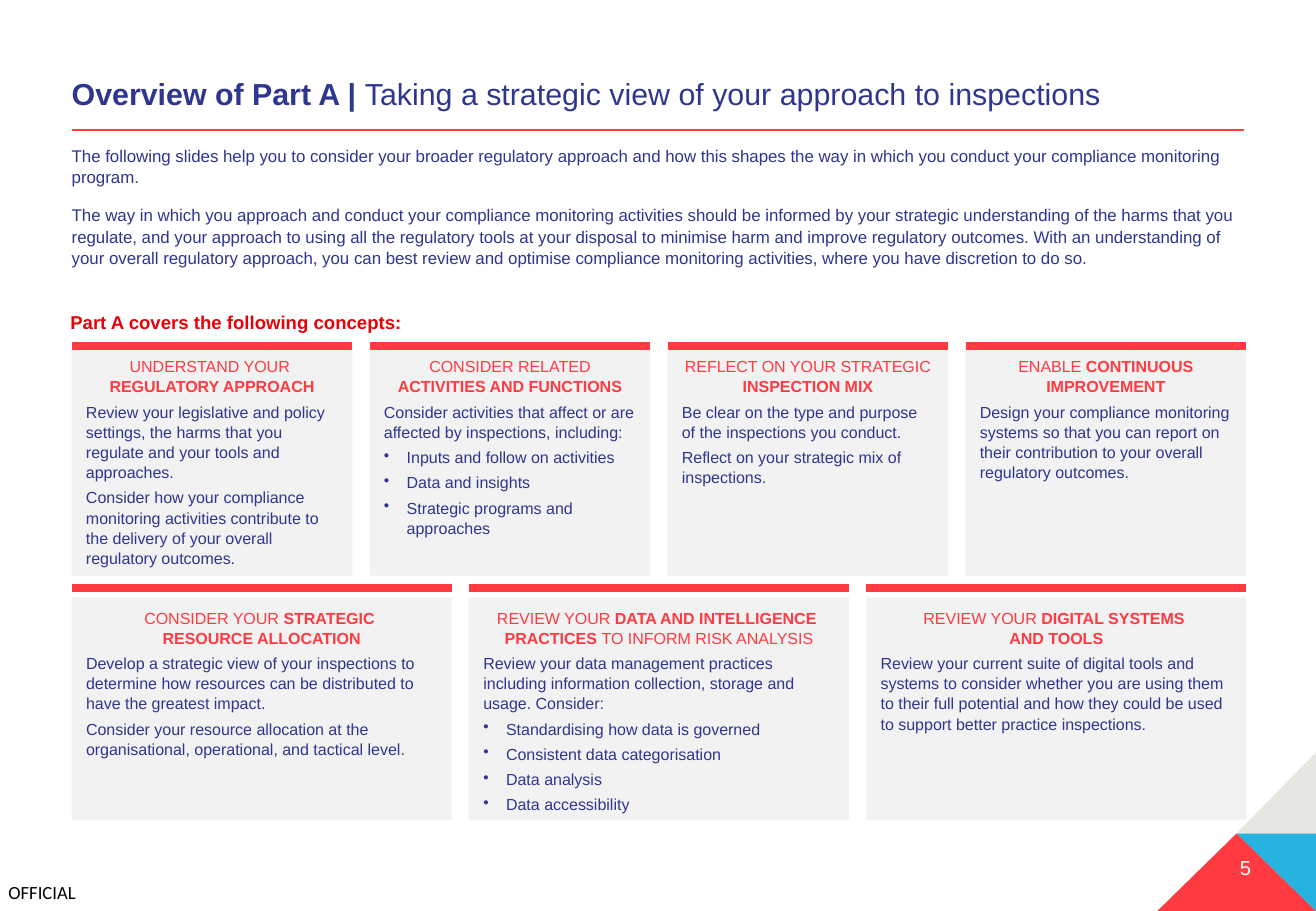
"""Build the Part A overview slide with its seven concept cards."""
import lxml.etree
import pptx
import pptx.chart.data
import pptx.dml.color
import pptx.enum.shapes
import pptx.enum.text
import pptx.oxml.ns
import pptx.util

Pt = pptx.util.Pt
ALIGN = pptx.enum.text.PP_ALIGN
ANCHOR = pptx.enum.text.MSO_ANCHOR

COLORS = {"red": "FF3A40", "deep_red": "EB0007", "navy": "2E368F", "card": "F2F2F2",
          "blue": "25B3E0", "stone": "E6E6E1", "white": "FFFFFF", "black": "000000"}

TITLE = [[("Overview of Part A | ", True),
          ("Taking a strategic view of your approach to inspections", False)]]
INTRODUCTION = [
    "The following slides help you to consider your broader regulatory approach and how this shapes "
    "the way in which you conduct your compliance monitoring program.",
    "The way in which you approach and conduct your compliance monitoring activities should be informed "
    "by your strategic understanding of the harms that you regulate, and your approach to using all the "
    "regulatory tools at your disposal to minimise harm and improve regulatory outcomes. With an "
    "understanding of your overall regulatory approach, you can best review and optimise compliance "
    "monitoring activities, where you have discretion to do so.",
]
CONCEPTS_LABEL = "Part A covers the following concepts:"
MARKING = "OFFICIAL"
PAGE_NUMBER = "5"

TOP_CARDS = [
    ([[("UNDERSTAND YOUR ", False)], [("REGULATORY APPROACH", True)]],
     ["Review your legislative and policy settings, the harms that you regulate and your tools and approaches.",
      "Consider how your compliance monitoring activities contribute to the delivery of your overall "
      "regulatory outcomes."], []),
    ([[("CONSIDER RELATED ", False), ("ACTIVITIES AND FUNCTIONS", True)]],
     ["Consider activities that affect or are affected by inspections, including:"],
     ["Inputs and follow on activities", "Data and insights", "Strategic programs and approaches"]),
    ([[("REFLECT ON YOUR STRATEGIC", False)], [("INSPECTION MIX", True)]],
     ["Be clear on the type and purpose of the inspections you conduct.",
      "Reflect on your strategic mix of inspections."], []),
    ([[("ENABLE ", False), ("CONTINUOUS IMPROVEMENT", True)]],
     ["Design your compliance monitoring systems so that you can report on their contribution to your "
      "overall regulatory outcomes."], []),
]
BOTTOM_CARDS = [
    ([[("CONSIDER YOUR ", False), ("STRATEGIC ", True)], [("RESOURCE ALLOCATION", True)]],
     ["Develop a strategic view of your inspections to determine how resources can be distributed to have "
      "the greatest impact.",
      "Consider your resource allocation at the organisational, operational, and tactical level."], []),
    ([[("REVIEW YOUR ", False), ("DATA AND INTELLIGENCE ", True)],
      [("PRACTICES ", True), ("TO INFORM RISK ANALYSIS", False)]],
     ["Review your data management practices including information collection, storage and usage. Consider:"],
     ["Standardising how data is governed", "Consistent data categorisation", "Data analysis",
      "Data accessibility"]),
    ([[("REVIEW YOUR ", False), ("DIGITAL SYSTEMS ", True)], [("AND TOOLS", True)]],
     ["Review your current suite of digital tools and systems to consider whether you are using them to "
      "their full potential and how they could be used to support better practice inspections."], []),
]
CARD_ROWS = [(TOP_CARDS, 205.2, 205.2, 136.1), (BOTTOM_CARDS, 348.5, 354.2, 131.8)]
CORNER_TRIANGLES = [
    ("red", [(686, 540), (733, 493.7), (780, 540)]),
    ("blue", [(733, 493.7), (780, 493.7), (780, 540)]),
    ("stone", [(733, 493.7), (780, 446.4), (780, 493.7)]),
]

LEFT, CARDS_RIGHT, RULE_RIGHT, GAP = 42.5, 738.7, 737.3, 10.2
BULLET_INDENT = 13.5


def color(name):
    return pptx.dml.color.RGBColor.from_string(COLORS[name])


def set_frame(text_frame, insets, anchor=ANCHOR.TOP, wrap=True):
    left, top, right, bottom = insets
    text_frame.margin_left, text_frame.margin_top = Pt(left), Pt(top)
    text_frame.margin_right, text_frame.margin_bottom = Pt(right), Pt(bottom)
    text_frame.vertical_anchor = anchor
    text_frame.word_wrap = wrap
    text_frame.auto_size = pptx.enum.text.MSO_AUTO_SIZE.NONE


def add_bullet(paragraph):
    properties = paragraph._p.get_or_add_pPr()
    properties.set("marL", str(Pt(BULLET_INDENT)))
    properties.set("indent", str(-Pt(BULLET_INDENT)))
    bullet = lxml.etree.SubElement(properties, pptx.oxml.ns.qn("a:buChar"))
    bullet.set("char", "•")


def write(paragraph, lines, size, color_name, align=ALIGN.LEFT, spacing=1.0, before=0, after=0, font="Arial"):
    paragraph.alignment = align
    paragraph.line_spacing = spacing
    paragraph.space_before, paragraph.space_after = Pt(before), Pt(after)
    for index, line in enumerate(lines):
        if index:
            paragraph.add_line_break()
        for text, bold in line:
            run = paragraph.add_run()
            run.text = text
            run.font.name, run.font.size, run.font.bold = font, Pt(size), bold
            run.font.color.rgb = color(color_name)


def add_box(slide, left, top, width, height, insets, wrap=True):
    box = slide.shapes.add_textbox(Pt(left), Pt(top), Pt(width), Pt(height))
    set_frame(box.text_frame, insets, wrap=wrap)
    return box.text_frame


def add_rule(slide, left, right, top, weight):
    rule = slide.shapes.add_connector(
        pptx.enum.shapes.MSO_CONNECTOR.STRAIGHT, Pt(left), Pt(top), Pt(right), Pt(top))
    rule.line.color.rgb = color("red")
    rule.line.width = Pt(weight)
    lxml.etree.SubElement(rule._element.spPr, pptx.oxml.ns.qn("a:effectLst"))


def paint(shape, color_name):
    shape.shadow.inherit = False
    shape.fill.solid()
    shape.fill.fore_color.rgb = color(color_name)
    shape.line.fill.background()


def add_card(slide, card, left, top, width, height):
    heading, paragraphs, bullets = card
    shape = slide.shapes.add_shape(
        pptx.enum.shapes.MSO_SHAPE.RECTANGLE, Pt(left), Pt(top), Pt(width), Pt(height))
    paint(shape, "card")
    frame = shape.text_frame
    set_frame(frame, (8.5, 5.7, 8.5, 3.6))
    write(frame.paragraphs[0], heading, 9.5, "red", ALIGN.CENTER, 1.05, after=3)
    for index, text in enumerate(paragraphs + bullets):
        paragraph = frame.add_paragraph()
        if index >= len(paragraphs):
            add_bullet(paragraph)
        write(paragraph, [[(text, False)]], 9.5, "navy", spacing=1.05, after=3)


def main():
    presentation = pptx.Presentation()
    presentation.slide_width, presentation.slide_height = Pt(780), Pt(540)
    slide = presentation.slides.add_slide(presentation.slide_layouts[5])

    title = slide.shapes.title
    title.left, title.top, title.width, title.height = Pt(LEFT), Pt(42.5), Pt(RULE_RIGHT - LEFT), Pt(27.4)
    set_frame(title.text_frame, (0, 3.6, 0, 3.6), ANCHOR.BOTTOM)
    write(title.text_frame.paragraphs[0], TITLE, 18, "navy", spacing=0.9)
    add_rule(slide, LEFT, RULE_RIGHT, 77, 1.25)

    for color_name, points in CORNER_TRIANGLES:
        builder = slide.shapes.build_freeform(*points[0], scale=Pt(1))
        builder.add_line_segments(points[1:], close=True)
        paint(builder.convert_to_shape(), color_name)

    marking = add_box(slide, 5, 522, 42.5, 13, (0, 0, 0, 0), wrap=False)
    write(marking.paragraphs[0], [[(MARKING, False)]], 11, "black", font="Calibri")
    number = add_box(slide, 679, 503.3, 62.6, 21.6, (0, 3.6, 0, 3.6))
    write(number.paragraphs[0], [[(PAGE_NUMBER, False)]], 12, "white", ALIGN.RIGHT)

    introduction = add_box(slide, LEFT, 82.1, RULE_RIGHT - LEFT, 86.4, (0, 3.6, 0, 3.6))
    for index, text in enumerate(INTRODUCTION):
        paragraph = introduction.add_paragraph() if index else introduction.paragraphs[0]
        write(paragraph, [[(text, False)]], 10, "navy", spacing=1.05, before=4 if index else 0, after=6)

    label = add_box(slide, 34.6, 180.7, 391, 20.9, (7.2, 3.6, 7.2, 3.6))
    write(label.paragraphs[0], [[(CONCEPTS_LABEL, True)]], 11, "deep_red")

    for cards, bar_top, card_top, height in CARD_ROWS:
        width = (CARDS_RIGHT - LEFT - GAP * (len(cards) - 1)) / len(cards)
        for column, card in enumerate(cards):
            left = LEFT + column * (width + GAP)
            add_card(slide, card, left, card_top, width, height)
            add_rule(slide, left, left + width, bar_top, 4.5)

    presentation.save("out.pptx")


if __name__ == "__main__":
    main()
